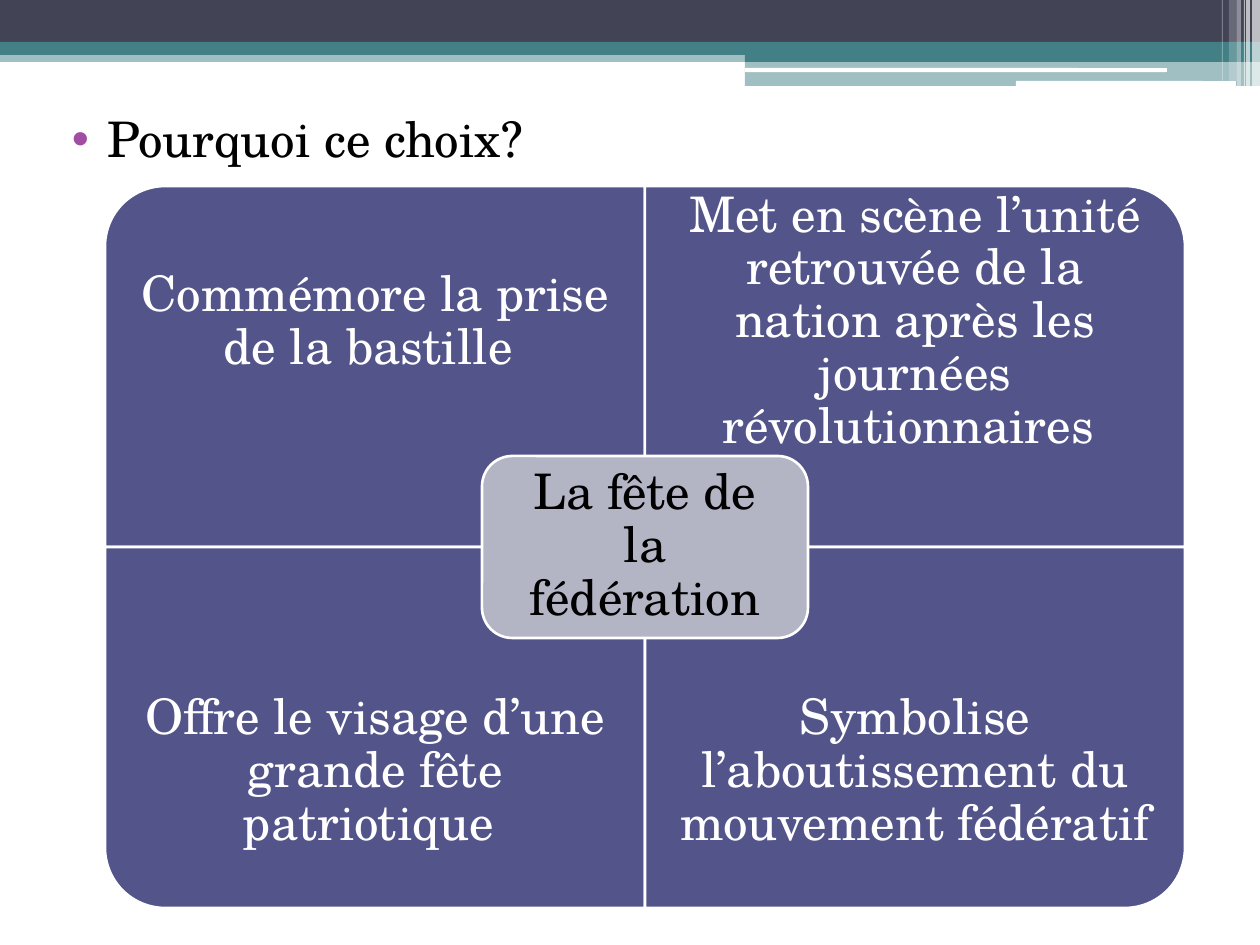
"""Build the slide on why the fête de la fédération was chosen."""
from dataclasses import dataclass

from lxml import etree
from pptx import Presentation
from pptx.dml.color import RGBColor
from pptx.enum.shapes import MSO_SHAPE
from pptx.enum.text import MSO_ANCHOR, MSO_AUTO_SIZE, PP_ALIGN
from pptx.oxml.ns import qn
from pptx.util import Emu, Pt

RECT = MSO_SHAPE.RECTANGLE
ROUNDED = MSO_SHAPE.ROUNDED_RECTANGLE
ONE_ROUND = MSO_SHAPE.ROUND_1_RECTANGLE
CENTER, LEFT = PP_ALIGN.CENTER, PP_ALIGN.LEFT
MIDDLE, TOP = MSO_ANCHOR.MIDDLE, MSO_ANCHOR.TOP
NO_AUTOFIT = MSO_AUTO_SIZE.NONE
PX = 914400 / 126


@dataclass(frozen=True)
class Theme:
    font: str = "TeX Gyre Schola"
    size: int = 28
    outline: float = 1.5
    white: str = "FFFFFF"
    black: str = "000000"
    slate: str = "424456"
    teal: str = "438086"
    indigo: str = "53548A"
    lavender: str = "B3B4C4"
    bullet: str = "A04DA3"


theme = Theme()


def draw(kind, box, fill, alpha=100, outlined=False, rotation=0):
    shape = slide.shapes.add_shape(kind, *[Emu(round(v * PX)) for v in box])
    shape.shadow.inherit = False
    shape.rotation = rotation
    shape.fill.solid()
    shape.fill.fore_color.rgb = RGBColor.from_string(fill)
    if alpha < 100:
        color = shape.fill._xPr.find(qn("a:solidFill"))[0]
        etree.SubElement(color, qn("a:alpha")).set("val", str(alpha * 1000))
    if outlined:
        shape.line.color.rgb = RGBColor.from_string(theme.white)
        shape.line.width = Pt(theme.outline)
    else:
        shape.line.fill.background()
    return shape


def write(holder, text, color=theme.white, align=CENTER, anchor=MIDDLE,
          inset=28, spacing=0.9, bullet=None):
    frame = holder.text_frame
    frame.word_wrap = True
    frame.auto_size = NO_AUTOFIT
    frame.vertical_anchor = anchor
    frame.margin_left = frame.margin_right = Emu(round(inset * PX))
    frame.margin_top = frame.margin_bottom = Emu(round(min(inset, 28) * PX))
    paragraph = frame.paragraphs[0]
    paragraph.text = text
    paragraph.alignment = align
    paragraph.line_spacing = spacing
    paragraph.space_before = Pt(0)
    if bullet:
        properties = paragraph._p.get_or_add_pPr()
        properties.set("marL", str(round(50 * PX)))
        properties.set("indent", str(round(-35 * PX)))
        bullet_color = etree.SubElement(properties, qn("a:buClr"))
        etree.SubElement(bullet_color, qn("a:srgbClr")).set("val", theme.bullet)
        etree.SubElement(properties, qn("a:buChar")).set("char", bullet)
    font = paragraph.runs[0].font
    font.name = theme.font
    font.size = Pt(theme.size)
    font.color.rgb = RGBColor.from_string(color)


deck = Presentation()
deck.slide_width, deck.slide_height = Emu(round(1260 * PX)), Emu(round(945 * PX))
slide = deck.slides.add_slide(deck.slide_layouts[1])
title, question = slide.placeholders
title.element.getparent().remove(title.element)

header_bands = [
    (RECT, (0, 50, 1260, 12), theme.teal, 50),
    (RECT, (0, 0, 1260, 42), theme.slate, 100),
    (RECT, (0, 42, 1260, 13), theme.teal, 100),
    (RECT, (745, 49, 515, 13), theme.teal, 100),
    (RECT, (745, 61, 515, 25), theme.teal, 50),
    (ROUNDED, (745, 68, 422, 4), theme.white, 100),
    (ROUNDED, (1016, 81, 220, 5), theme.white, 100),
]
for kind, box, fill, alpha in header_bands:
    draw(kind, box, fill, alpha)

corner_stripes = [
    (1252, 8, 86, 65), (1246, 4, 86, 65), (1244, 1, 86, 60),
    (1237, 4, 86, 40), (1229, 8, 81, 20), (1222, 1, 81, 30),
]
for left, width, height, alpha in corner_stripes:
    draw(RECT, (left, 0, width, height), theme.white, alpha)

question.left, question.top = Emu(round(44 * PX)), Emu(round(96 * PX))
question.width, question.height = Emu(round(1134 * PX)), Emu(round(596 * PX))
write(question, "Pourquoi ce choix?", color=theme.black, align=LEFT,
      anchor=TOP, inset=13, spacing=1.0, bullet="•")

center_x, center_y = 645, 547
quarter_w, quarter_h, reason_h = 540, 361, 272
reasons = [
    ("Commémore la prise de la bastille ", 0, 0, 270),
    ("Met en scène l’unité retrouvée de la nation après les journées "
     "révolutionnaires ", 1, 0, 0),
    ("Offre le visage d’une grande fête patriotique ", 0, 1, 180),
    ("Symbolise l’aboutissement du mouvement fédératif", 1, 1, 90),
]
for reason, column, row, rotation in reasons:
    left = center_x + (column - 1) * quarter_w
    top = center_y + (row - 1) * quarter_h
    width, height = quarter_w, quarter_h
    if rotation in (90, 270):
        width, height = height, width
    quarter_box = (left + (quarter_w - width) / 2,
                   top + (quarter_h - height) / 2, width, height)
    draw(ONE_ROUND, quarter_box, theme.indigo, outlined=True, rotation=rotation)
    reason_box = (left, top + row * (quarter_h - reason_h), quarter_w, reason_h)
    write(slide.shapes.add_textbox(*[Emu(round(v * PX)) for v in reason_box]), reason)

hub_w, hub_h = 326, 182
hub = draw(ROUNDED, (center_x - hub_w / 2, center_y - hub_h / 2, hub_w, hub_h),
           theme.lavender, outlined=True)
write(hub, "La fête de la fédération", color=theme.black, inset=15)

deck.save("out.pptx")
